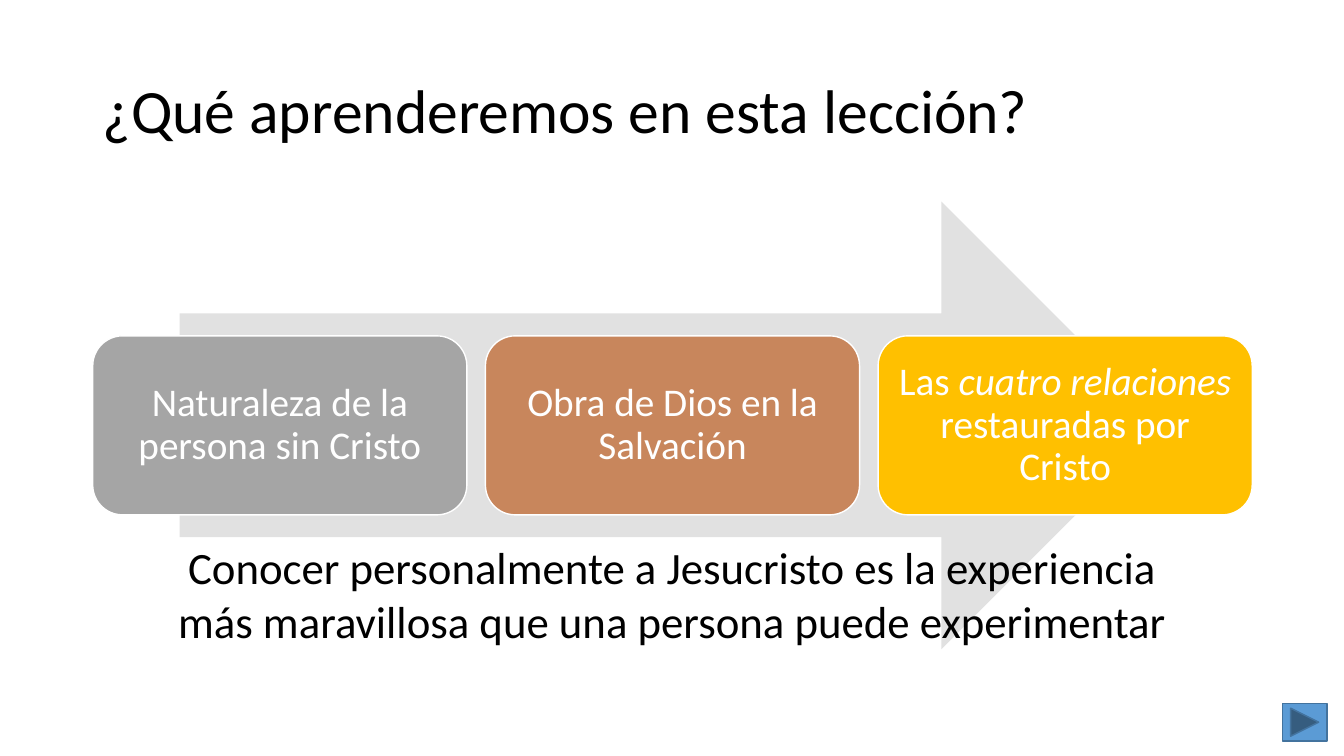
from pptx import Presentation
from pptx.dml.color import RGBColor
from pptx.enum.shapes import MSO_SHAPE
from pptx.enum.text import MSO_ANCHOR, PP_ALIGN
from pptx.util import Inches, Pt

ARROW = MSO_SHAPE.RIGHT_ARROW
CARD = MSO_SHAPE.ROUNDED_RECTANGLE
NEXT = MSO_SHAPE.ACTION_BUTTON_FORWARD_OR_NEXT
TOP, MIDDLE = MSO_ANCHOR.TOP, MSO_ANCHOR.MIDDLE
LEFT, CENTER = PP_ALIGN.LEFT, PP_ALIGN.CENTER

BLACK = RGBColor(0x00, 0x00, 0x00)
WHITE = RGBColor(0xFF, 0xFF, 0xFF)
PALE = RGBColor(0xE1, 0xE1, 0xE1)
GRAY = RGBColor(0xA5, 0xA5, 0xA5)
CLAY = RGBColor(0xC8, 0x86, 0x5C)
GOLD = RGBColor(0xFF, 0xC0, 0x00)
BLUE = RGBColor(0x5B, 0x9B, 0xD5)
NAVY = RGBColor(0x43, 0x73, 0x9E)

WIDE, HIGH = 13.33, 7.5
FONT = "Calibri"

# Each topic: fill, then runs of (text, italic)
TOPICS = [
    (GRAY, [("Naturaleza de la persona sin Cristo", False)]),
    (CLAY, [("Obra de Dios en la Salvación", False)]),
    (GOLD, [("Las ", False), ("cuatro relaciones ", True),
            ("restauradas por Cristo", False)]),
]


def write(shape, runs, size, color, align=CENTER, anchor=MIDDLE,
          lines=1.0, pad=(0.1, 0.05)):
    frame = shape.text_frame
    across, down = map(Inches, pad)
    style = {"word_wrap": True, "vertical_anchor": anchor,
             "margin_left": across, "margin_right": across,
             "margin_top": down, "margin_bottom": down}
    for name, value in style.items():
        setattr(frame, name, value)
    para = frame.paragraphs[0]
    para.alignment, para.line_spacing = align, lines
    for text, slant in runs:
        run = para.add_run()
        run.text = text
        for name, value in {"name": FONT, "size": Pt(size),
                            "italic": slant}.items():
            setattr(run.font, name, value)
        run.font.color.rgb = color


def draw(slide, kind, box, fill, line=None):
    """Add a flat preset shape, outlined only if a line colour is given."""
    shape = slide.shapes.add_shape(kind, *map(Inches, box))
    shape.shadow.inherit = False
    shape.fill.solid()
    shape.fill.fore_color.rgb = fill
    if line is None:
        shape.line.fill.background()
    else:
        shape.line.color.rgb = line
        shape.line.width = Pt(1)
    return shape


def label(slide, box, text, size, **style):
    shape = slide.shapes.add_textbox(*map(Inches, box))
    write(shape, [(text, False)], size, BLACK, **style)


def process(slide, box):
    """Place the topic cards in equal columns across a wide arrow."""
    left, top, width, height = box
    share = 0.85
    draw(slide, ARROW,
         (left + width * (1 - share) / 2, top, width * share, height), PALE)
    gap = width * 0.016
    count = len(TOPICS)
    col = (width - gap * (count - 1)) / count
    tall = height * 0.4
    for i, (fill, runs) in enumerate(TOPICS):
        spot = (left + i * (col + gap), top + (height - tall) / 2, col, tall)
        card = draw(slide, CARD, spot, fill, WHITE)
        write(card, runs, 28, WHITE, lines=0.9, pad=(0.11, 0.11))


def main():
    deck = Presentation()
    deck.slide_width, deck.slide_height = Inches(WIDE), Inches(HIGH)
    slide = deck.slides.add_slide(deck.slide_layouts[6])
    edge = WIDE * 0.069
    label(slide, (edge, 0.4, 11.5, 1.45),
          "¿Qué aprenderemos en esta lección?", 44, align=LEFT, lines=0.9)
    process(slide, (edge, 2, 11.5, 4.44))
    label(slide, (1.52, 5.31, 10.3, 1.18),
          "Conocer personalmente a Jesucristo es la experiencia "
          "más maravillosa que una persona puede experimentar", 32, anchor=TOP)
    draw(slide, NEXT, (12.72, 6.98, 0.44, 0.37), BLUE, NAVY)
    deck.save("out.pptx")


if __name__ == "__main__":
    main()
